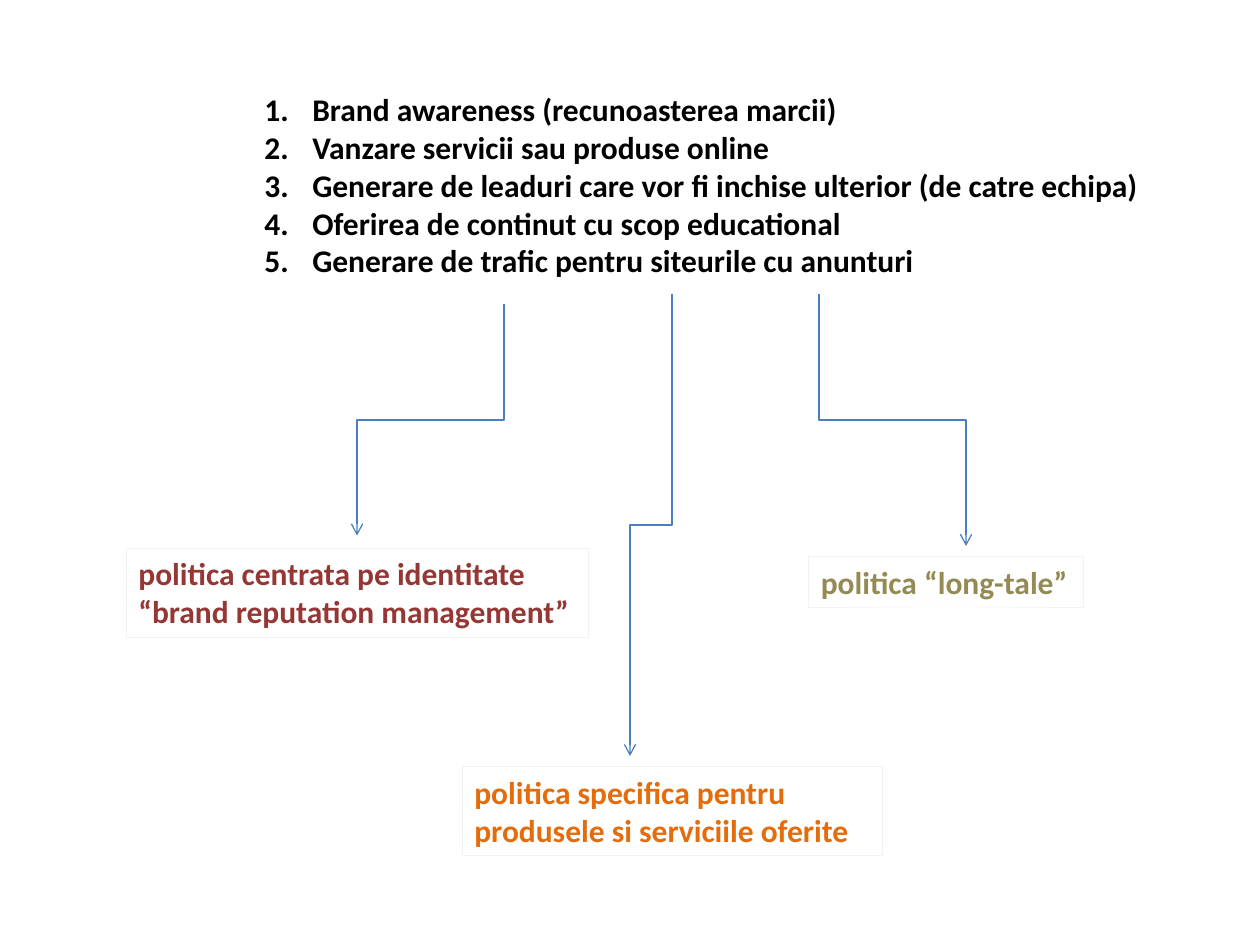
from typing import NamedTuple

from lxml.etree import SubElement
from pptx import Presentation
from pptx.dml.color import RGBColor
from pptx.enum.shapes import MSO_CONNECTOR
from pptx.enum.text import MSO_AUTO_SIZE
from pptx.oxml.ns import qn
from pptx.util import Inches, Pt

BLACK = RGBColor(0x00, 0x00, 0x00)
BLUE = RGBColor(0x4B, 0x7E, 0xBC)
GREY = RGBColor(0xF2, 0xF2, 0xF2)
RED = RGBColor(0x95, 0x37, 0x35)
ORANGE = RGBColor(0xE4, 0x6C, 0x0A)
OLIVE = RGBColor(0x94, 0x8A, 0x54)

COLS, ROWS = 120, 90  # square cells, twelve to the inch
FONT = {"name": "Calibri", "size": Pt(18), "bold": True}
INDENT = Inches(0.38)


class Box(NamedTuple):
    col: float
    row: float
    wide: float
    high: float
    lines: list[str]
    color: RGBColor
    wrap: bool = True
    framed: bool = True
    listed: bool = False


class Arrow(NamedTuple):
    col: float
    row: float
    end_col: float
    end_row: float


GOALS = Box(24, 8, 86.3, 19.4, [
    "Brand awareness (recunoasterea marcii)",
    "Vanzare servicii sau produse online",
    "Generare de leaduri care vor fi inchise ulterior (de catre echipa)",
    "Oferirea de continut cu scop educational",
    "Generare de trafic pentru siteurile cu anunturi",
], BLACK, wrap=False, framed=False, listed=True)

POLICIES = [
    Box(12, 52.2, 44, 8.5,
        ["politica centrata pe identitate “brand reputation management”"], RED),
    Box(44, 73, 40, 8.5,
        ["politica specifica pentru produsele si serviciile oferite"], ORANGE),
    Box(77, 53, 26.2, 4.8, ["politica “long-tale”"], OLIVE, wrap=False),
]

ARROWS = [Arrow(64, 28, 60, 72), Arrow(78, 28, 92, 52), Arrow(48, 29, 34, 51)]

deck = Presentation()
deck.slide_width, deck.slide_height = Inches(10), Inches(7.5)


def across(cols: float) -> int:
    return round(deck.slide_width * cols / COLS)


def down(rows: float) -> int:
    return round(deck.slide_height * rows / ROWS)


def number(para) -> None:
    props = para._p.get_or_add_pPr()
    props.set("marL", str(INDENT))
    props.set("indent", str(-INDENT))
    SubElement(props, qn("a:buFont"), typeface="+mj-lt")
    SubElement(props, qn("a:buAutoNum"), type="arabicPeriod")


def draw_box(slide, box: Box) -> None:
    shape = slide.shapes.add_textbox(
        across(box.col), down(box.row), across(box.wide), down(box.high))
    if box.framed:
        shape.line.color.rgb = GREY
        shape.line.width = Pt(0.25)
    frame = shape.text_frame
    frame.word_wrap = box.wrap
    frame.auto_size = MSO_AUTO_SIZE.SHAPE_TO_FIT_TEXT
    frame.text = "\n".join(box.lines)
    for para in frame.paragraphs:
        font = para.runs[0].font
        for key, value in FONT.items():
            setattr(font, key, value)
        font.color.rgb = box.color
        if box.listed:
            number(para)


def draw_arrow(slide, arrow: Arrow) -> None:
    # An elbow runs sideways first, so lay it flat and turn it to run down
    drop = down(arrow.end_row - arrow.row)
    shift = across(abs(arrow.end_col - arrow.col))
    left = across((arrow.col + arrow.end_col) / 2) - drop // 2
    top = down((arrow.row + arrow.end_row) / 2) - shift // 2
    right = left + drop
    mirror = arrow.end_col > arrow.col
    start, end = (right, left) if mirror else (left, right)
    line = slide.shapes.add_connector(
        MSO_CONNECTOR.ELBOW, start, top, end, top + shift)
    props = line._element.spPr
    props.xfrm.set("rot", str((270 if mirror else 90) * 60000))
    line.line.color.rgb = BLUE
    line.line.width = Pt(0.75)
    SubElement(line.line._get_or_add_ln(), qn("a:tailEnd"), type="arrow")
    SubElement(props, qn("a:effectLst"))


def main() -> None:
    slide = deck.slides.add_slide(deck.slide_layouts[6])
    # Goals on top, arrows leading to the policies
    draw_box(slide, GOALS)
    for arrow in ARROWS:
        draw_arrow(slide, arrow)
    for box in POLICIES:
        draw_box(slide, box)
    deck.save("out.pptx")


if __name__ == "__main__":
    main()
